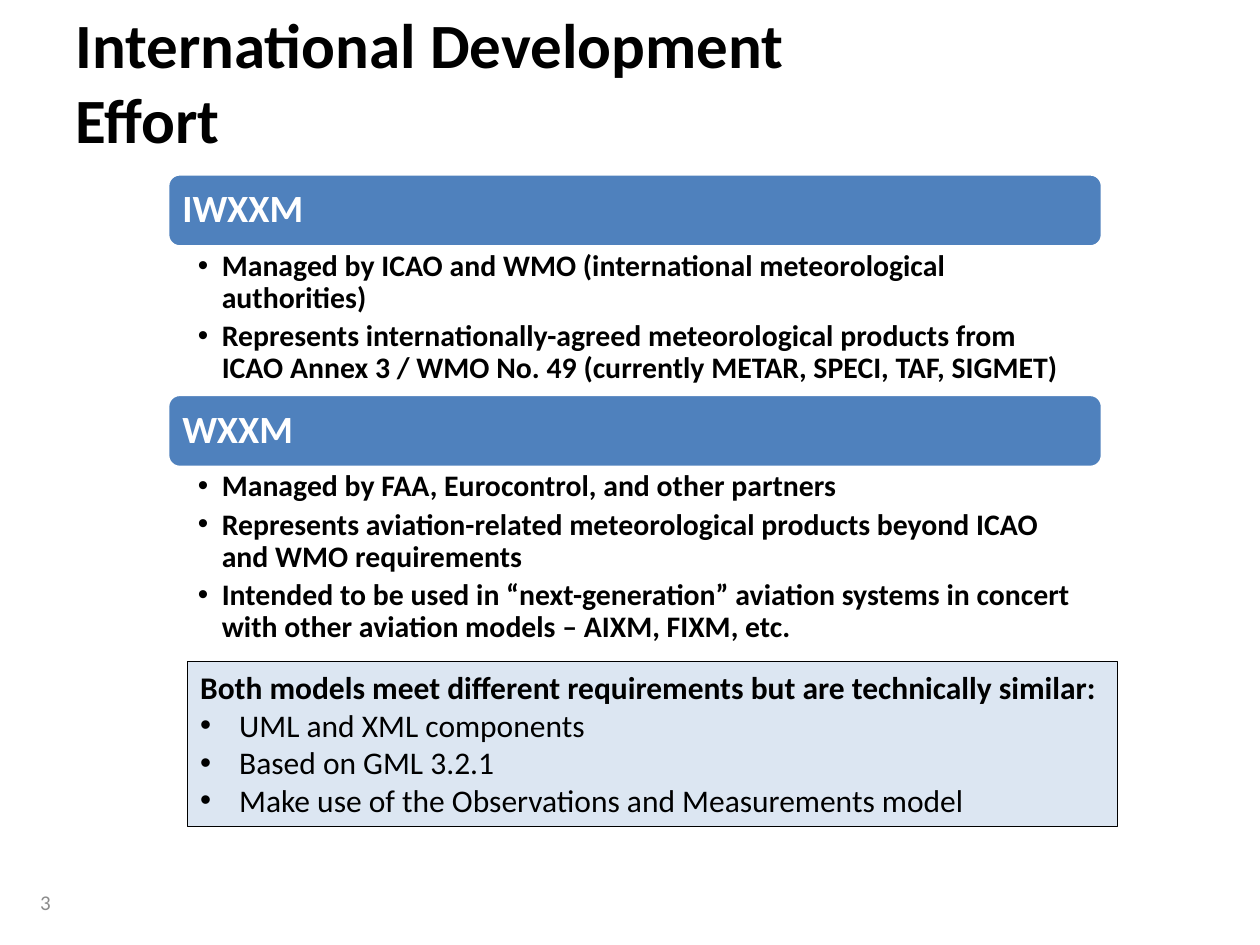
from lxml import etree
from pptx import Presentation
from pptx.dml.color import RGBColor
from pptx.enum import shapes, text
from pptx.oxml import ns
from pptx.util import Inches, Pt

FONT = "Calibri"
COLORS = {
    "ink": "000000",
    "paper": "FFFFFF",
    "bar": "4F81BD",
    "summary": "DCE6F2",
    "number": "8C8C8C",
}

# Heading, top of its bar, height of its list, list items
MODELS = [
    ("IWXXM", 1.38, 1.17, [
        "Managed by ICAO and WMO (international meteorological authorities)",
        "Represents internationally-agreed meteorological products from "
        "ICAO Annex 3 / WMO No. 49 (currently METAR, SPECI, TAF, SIGMET)",
    ]),
    ("WXXM", 3.13, 1.49, [
        "Managed by FAA, Eurocontrol, and other partners",
        "Represents aviation-related meteorological products beyond ICAO "
        "and WMO requirements",
        "Intended to be used in “next-generation” aviation systems in concert "
        "with other aviation models – AIXM, FIXM, etc.",
    ]),
]
SUMMARY = "Both models meet different requirements but are technically similar:"
SIMILARITIES = [
    "UML and XML components",
    "Based on GML 3.2.1",
    "Make use of the Observations and Measurements model",
]
LEFT, WIDTH, BAR_HEIGHT = 1.33, 7.42, 0.58


def color(name):
    return RGBColor.from_string(COLORS[name])


def set_margins(frame, left, top, right, bottom):
    frame.margin_left, frame.margin_top = Inches(left), Inches(top)
    frame.margin_right, frame.margin_bottom = Inches(right), Inches(bottom)


def add_bullet(paragraph, indent):
    props = paragraph._p.get_or_add_pPr()
    props.set("marL", str(Inches(indent)))
    props.set("indent", str(-Inches(indent)))
    bullet_font = etree.SubElement(props, ns.qn("a:buFont"))
    bullet_font.set("typeface", "Arial")
    etree.SubElement(props, ns.qn("a:buChar")).set("char", "•")


def write(frame, lines, size, ink="ink", bold=False, indent=None,
          spacing=None, after=None):
    """Fill the frame, or continue it when it already holds text."""
    for line in lines:
        paragraph = frame.add_paragraph() if frame.text else frame.paragraphs[0]
        paragraph.text = line
        paragraph.alignment = text.PP_ALIGN.LEFT
        if spacing:
            paragraph.line_spacing = spacing
        if after:
            paragraph.space_after = Pt(after)
        if indent:
            add_bullet(paragraph, indent)
        font = paragraph.font
        font.name, font.size, font.bold = FONT, Pt(size), bold
        font.color.rgb = color(ink)


def add_text(slide, left, top, width, height):
    box = slide.shapes.add_textbox(*map(Inches, (left, top, width, height)))
    box.text_frame.word_wrap = True
    return box.text_frame


def add_panel(slide, kind, place, fill, line, line_width):
    panel = slide.shapes.add_shape(kind, *map(Inches, place))
    panel.shadow.inherit = False
    panel.fill.solid()
    panel.fill.fore_color.rgb = color(fill)
    panel.line.color.rgb = color(line)
    panel.line.width = Pt(line_width)
    return panel.text_frame


def add_model(slide, heading, top, list_height, items):
    bar = add_panel(slide, shapes.MSO_SHAPE.ROUNDED_RECTANGLE,
                    (LEFT, top, WIDTH, BAR_HEIGHT), "bar", "paper", 2)
    set_margins(bar, 0.09, 0.09, 0.09, 0.09)
    bar.vertical_anchor = text.MSO_ANCHOR.MIDDLE
    write(bar, [heading], 22, "paper", bold=True, spacing=0.9)

    details = add_text(slide, LEFT, top + BAR_HEIGHT, WIDTH, list_height)
    set_margins(details, 0.24, 0.03, 0.17, 0.03)
    write(details, items, 17, bold=True, indent=0.19, spacing=0.9, after=3.4)


def main():
    deck = Presentation()
    deck.slide_width, deck.slide_height = Inches(10), Inches(7.5)
    slide = deck.slides.add_slide(deck.slide_layouts[6])

    # Title
    title = add_text(slide, 0.5, 0.25, 6.08, 0.78)
    title.vertical_anchor = text.MSO_ANCHOR.MIDDLE
    write(title, ["International Development Effort"], 36, bold=True)

    # The two models
    for model in MODELS:
        add_model(slide, *model)

    # What they share
    summary = add_panel(slide, shapes.MSO_SHAPE.RECTANGLE,
                        (1.49, 5.25, 7.38, 1.31), "summary", "ink", 0.75)
    summary.word_wrap = False
    summary.auto_size = text.MSO_AUTO_SIZE.SHAPE_TO_FIT_TEXT
    summary.vertical_anchor = text.MSO_ANCHOR.TOP
    write(summary, [SUMMARY], 18, bold=True)
    write(summary, SIMILARITIES, 18, indent=0.31)

    # Slide number
    number = add_text(slide, 0.22, 6.96, 2.33, 0.4)
    number.vertical_anchor = text.MSO_ANCHOR.MIDDLE
    write(number, ["3"], 12, "number")

    deck.save("out.pptx")


if __name__ == "__main__":
    main()
